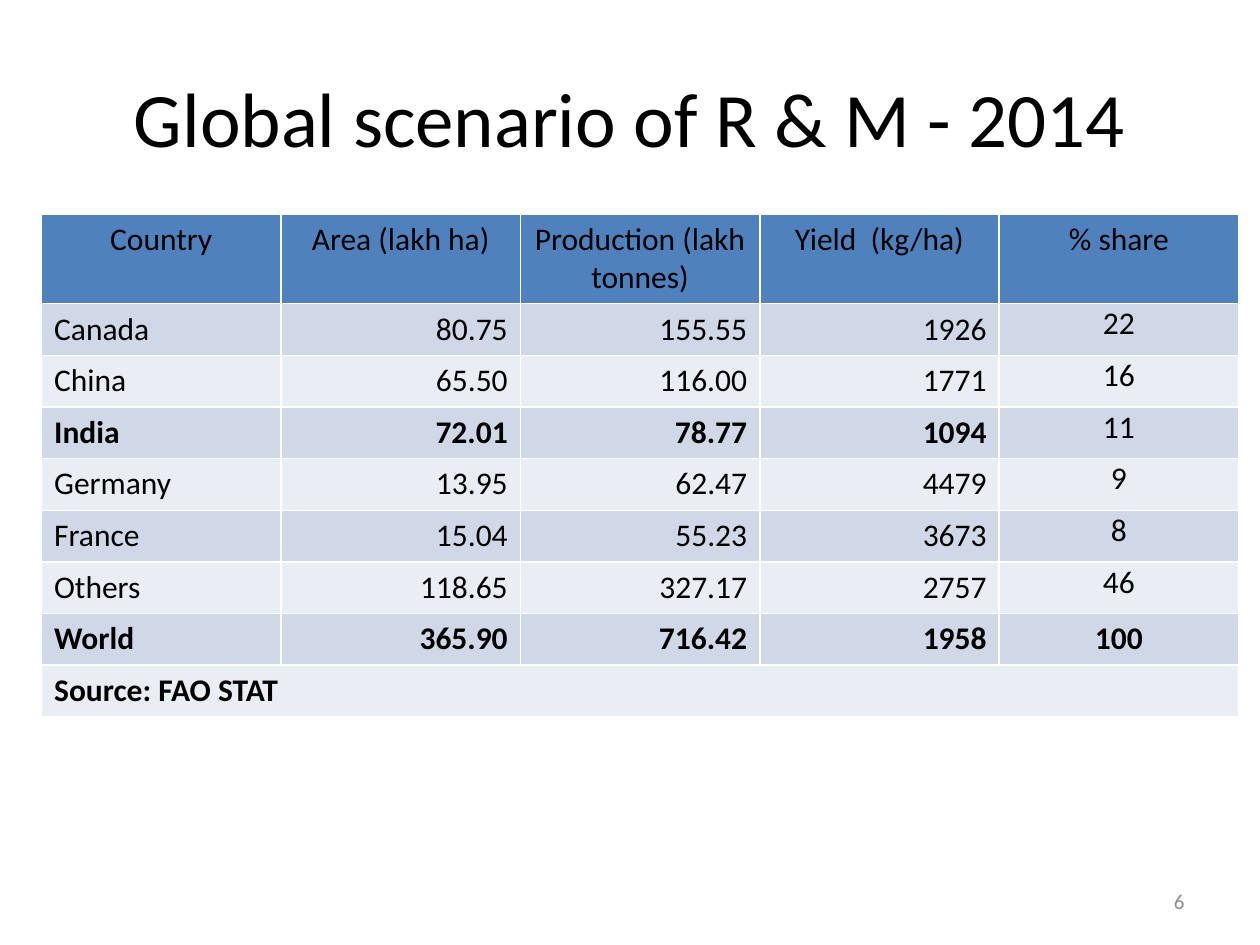
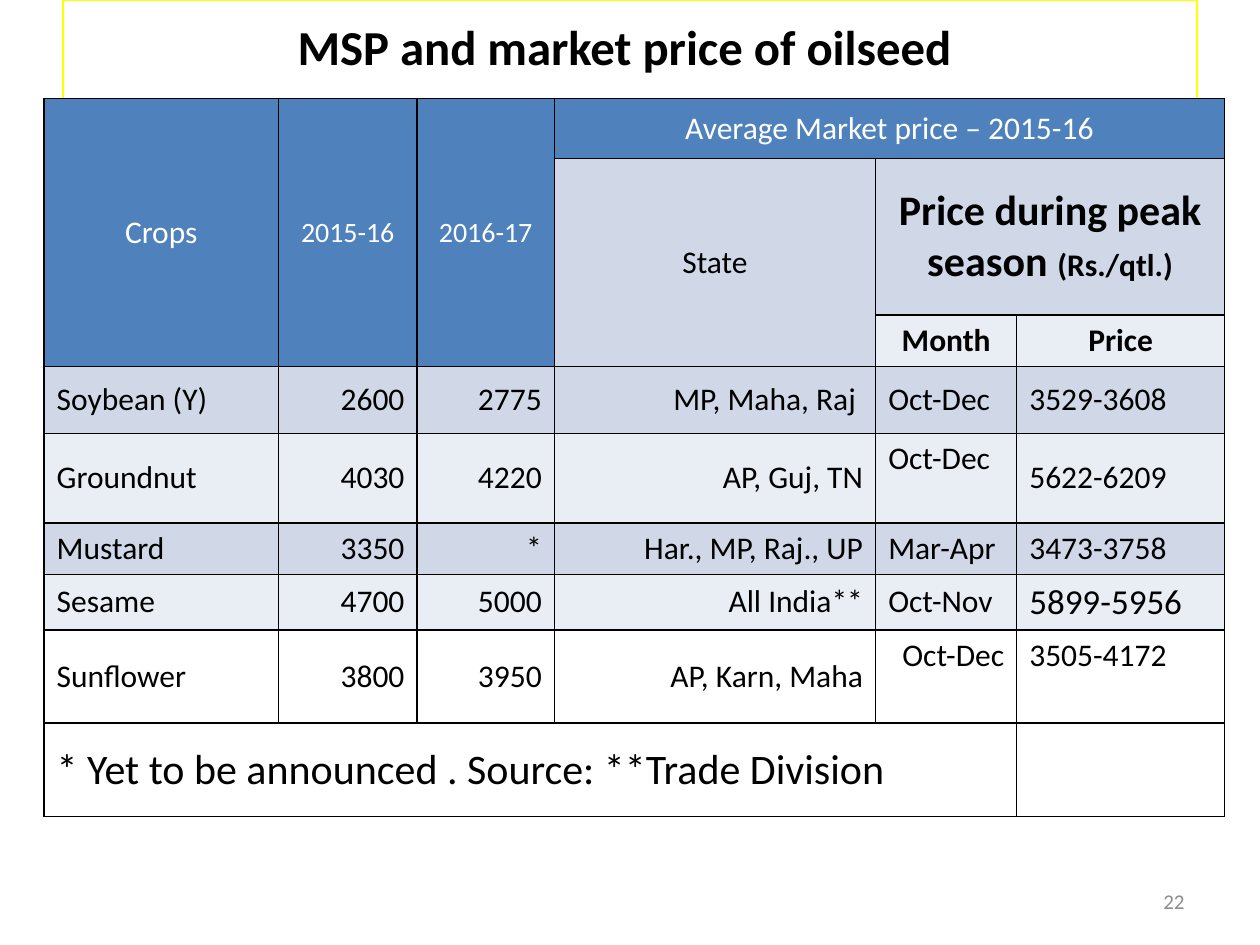
from pptx import Presentation
from pptx.dml.color import RGBColor
from pptx.enum.text import MSO_ANCHOR, PP_ALIGN
from pptx.oxml import parse_xml
from pptx.oxml.ns import nsdecls
from pptx.util import Inches, Pt

COLORS = {
    "header": "4F81BD",
    "band_dark": "D0D8E8",
    "band_light": "E9EDF4",
    "black": "000000",
    "white": "FFFFFF",
    "frame": "FFFF00",
    "number": "8C8C8C",
}
FONT = "Calibri"
LEFT, CENTER, RIGHT = PP_ALIGN.LEFT, PP_ALIGN.CENTER, PP_ALIGN.RIGHT
TOP, MIDDLE = MSO_ANCHOR.TOP, MSO_ANCHOR.MIDDLE


def color(name):
    return RGBColor.from_string(COLORS[name])


def style(para, size, ink="black", bold=False, align=LEFT):
    para.alignment = align
    para.font.name = FONT
    para.font.size = Pt(size)
    para.font.bold = bold
    para.font.color.rgb = color(ink)


# Shared page parts
def add_title(page, text, box, size, bold=False):
    title = page.shapes.title
    title.left, title.top, title.width, title.height = map(Inches, box)
    frame = title.text_frame
    frame.text = text
    frame.vertical_anchor = MIDDLE
    style(frame.paragraphs[0], size, bold=bold, align=CENTER)
    return title


def add_page_number(page, number):
    box = page.shapes.add_textbox(*map(Inches, (7.17, 6.95, 2.33, 0.4)))
    frame = box.text_frame
    frame.word_wrap = True
    frame.vertical_anchor = MIDDLE
    frame.text = str(number)
    style(frame.paragraphs[0], 12, "number", align=RIGHT)


# Table helpers
def add_grid(page, left, top, widths, heights, line):
    """Add an unfilled table whose cells all have 1 pt borders."""
    box = map(Inches, (left, top, sum(widths), sum(heights)))
    table = page.shapes.add_table(len(heights), len(widths), *box).table
    table.first_row = table.horz_banding = False
    for column, width in zip(table.columns, widths):
        column.width = Inches(width)
    for row, height in zip(table.rows, heights):
        row.height = Inches(height)
    for cell in table.iter_cells():
        properties = cell._tc.get_or_add_tcPr()
        for side in ("lnL", "lnR", "lnT", "lnB"):
            properties.append(parse_xml(
                f'<a:{side} {nsdecls("a")} w="12700"><a:solidFill>'
                f'<a:srgbClr val="{COLORS[line]}"/></a:solidFill></a:{side}>'))
        cell.fill.background()
    return table


def fill_cell(cell, text, fill=None, size=18, ink="black", bold=False,
              align=LEFT, anchor=MIDDLE):
    cell.text = text
    cell.vertical_anchor = anchor
    style(cell.text_frame.paragraphs[0], size, ink, bold, align)
    if fill:
        cell.fill.solid()
        cell.fill.fore_color.rgb = color(fill)


def band(index):
    return "band_light" if index % 2 else "band_dark"


# Slide: production by country
def build_global_scenario(page):
    add_title(page, "Global scenario of R & M - 2014", (0.5, 0.3, 9, 1.25), 44)
    headings = ["Country", "Area (lakh ha)", "Production (lakh tonnes)",
                "Yield  (kg/ha)", "% share"]
    countries = [
        ("Canada", "80.75", "155.55", "1926", "22"),
        ("China", "65.50", "116.00", "1771", "16"),
        ("India", "72.01", "78.77", "1094", "11"),
        ("Germany", "13.95", "62.47", "4479", "9"),
        ("France", "15.04", "55.23", "3673", "8"),
        ("Others", "118.65", "327.17", "2757", "46"),
        ("World", "365.90", "716.42", "1958", "100"),
    ]
    alignments = [LEFT, RIGHT, RIGHT, RIGHT, CENTER]
    heights = [0.71] + [0.41] * (len(countries) + 1)
    table = add_grid(page, 0.33, 1.7, [1.9] * len(headings), heights, "white")

    for column, heading in enumerate(headings):
        fill_cell(table.cell(0, column), heading, "header", align=CENTER, anchor=TOP)

    for index, values in enumerate(countries):
        country = values[0]
        for column, value in enumerate(values):
            cell = table.cell(index + 1, column)
            is_share = column == 4
            bold = country == "World" or (country == "India" and not is_share)
            fill_cell(cell, value, band(index), bold=bold,
                      align=alignments[column], anchor=TOP)
            if is_share and country != "World":
                cell.margin_left = cell.margin_right = cell.margin_top = Inches(0.01)
                cell.margin_bottom = 0

    # Source row
    last = len(heights) - 1
    table.cell(last, 0).merge(table.cell(last, len(headings) - 1))
    fill_cell(table.cell(last, 0), "Source: FAO STAT", band(len(countries)),
              bold=True, anchor=TOP)
    add_page_number(page, 6)


# Slide: support and market prices
def add_price_headings(table):
    # row, column, last row, last column, text, fill, format
    white = {"ink": "white"}
    headings = [
        (0, 0, 2, 0, "Crops", "header", white),
        (0, 1, 2, 1, "2015-16", "header", {"ink": "white", "size": 16}),
        (0, 2, 2, 2, "2016-17", "header", {"ink": "white", "size": 16}),
        (0, 3, 0, 5, "Average Market price – 2015-16", "header", white),
        (1, 3, 2, 3, "State", "band_dark", {}),
        (1, 4, 1, 5, "Price during peak season ", "band_dark",
         {"size": 24, "bold": True}),
        (2, 4, 2, 4, "Month", "band_light", {"bold": True}),
        (2, 5, 2, 5, "Price", "band_light", {"bold": True}),
    ]
    for row, column, last_row, last_column, text, fill, look in headings:
        cell = table.cell(row, column)
        if (row, column) != (last_row, last_column):
            cell.merge(table.cell(last_row, last_column))
        fill_cell(cell, text, fill, align=CENTER, **look)
    unit = table.cell(1, 4).text_frame.paragraphs[0].add_run()
    unit.text = "(Rs./qtl.)"
    unit.font.size = Pt(18)


def build_market_price(page):
    title = add_title(page, "MSP and market price of oilseed ",
                      (0.5, 0, 9, 0.86), 27.9, bold=True)
    title.line.color.rgb = color("frame")
    title.line.width = Pt(0.75)
    title.text_frame.margin_bottom = Inches(0.18)

    crops = [
        ("Soybean (Y)", "2600", "2775", "MP, Maha, Raj ", "Oct-Dec", "3529-3608"),
        ("Groundnut", "4030", "4220", "AP, Guj, TN", "Oct-Dec", "5622-6209"),
        ("Mustard", "3350", "*", "Har., MP, Raj., UP", "Mar-Apr", "3473-3758"),
        ("Sesame", "4700", "5000", "All India**", "Oct-Nov", "5899-5956"),
        ("Sunflower", "3800", "3950", "AP, Karn, Maha", "Oct-Dec", "3505-4172"),
    ]
    alignments = [LEFT, RIGHT, RIGHT, RIGHT, LEFT, LEFT]
    # Cells that depart from their column's format
    exceptions = {
        ("Groundnut", 4): {"anchor": TOP},
        ("Sesame", 5): {"size": 20},
        ("Sunflower", 4): {"anchor": TOP, "align": RIGHT},
        ("Sunflower", 5): {"anchor": TOP},
    }
    table = add_grid(page, 0.35, 0.78, [1.86, 1.1, 1.09, 2.55, 1.12, 1.65],
                     [0.48, 1.24, 0.41, 0.53, 0.71, 0.41, 0.43, 0.74, 0.74], "black")
    add_price_headings(table)

    for index, values in enumerate(crops):
        fill = None if values[0] == "Sunflower" else band(index)
        for column, value in enumerate(values):
            look = {"align": alignments[column]}
            look.update(exceptions.get((values[0], column), {}))
            fill_cell(table.cell(index + 3, column), value, fill, **look)

    # Footnote row
    table.cell(8, 0).merge(table.cell(8, 4))
    fill_cell(table.cell(8, 0), "* Yet to be announced . Source: **Trade Division",
              size=24)
    add_page_number(page, 22)


def main():
    deck = Presentation()
    deck.slide_width, deck.slide_height = Inches(10), Inches(7.5)
    title_only = deck.slide_layouts[5]
    for build in (build_global_scenario, build_market_price):
        build(deck.slides.add_slide(title_only))
    deck.save("out.pptx")


if __name__ == "__main__":
    main()
